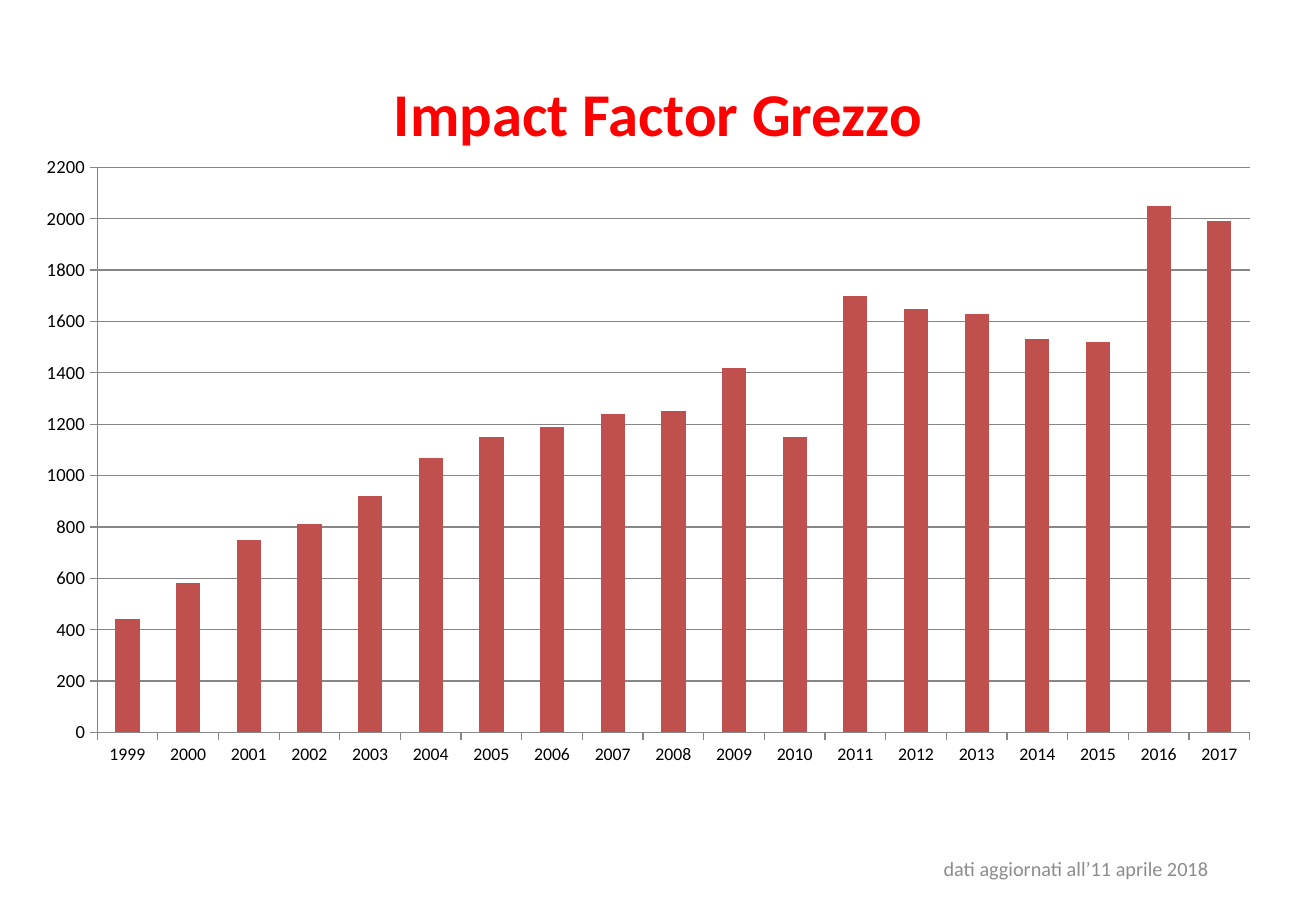
from dataclasses import dataclass

from lxml.etree import SubElement
from pptx import Presentation
from pptx.chart.data import CategoryChartData
from pptx.dml.color import RGBColor
from pptx.enum.chart import XL_CHART_TYPE, XL_TICK_MARK
from pptx.enum.text import MSO_ANCHOR, PP_ALIGN
from pptx.oxml import parse_xml
from pptx.oxml.ns import nsdecls, qn
from pptx.util import Cm, Pt

FONT = "Calibri"
COLORS = {"title": "FF0000", "note": "8C8C8C", "bar": "C0504D",
          "line": "868686", "text": "000000"}
START = 1999
VALUES = (440, 580, 750, 810, 920, 1070, 1150, 1190, 1240, 1250,
          1420, 1150, 1700, 1650, 1630, 1530, 1520, 2050, 1990)
PLOT = {"x": 0.06, "y": 0.04, "w": 0.92, "h": 0.89}


@dataclass
class Box:
    left: float
    top: float
    width: float
    height: float

    def frame(self) -> tuple:
        return Cm(self.left), Cm(self.top), Cm(self.width), Cm(self.height)


@dataclass
class Label:
    text: str
    size: float
    color: str
    bold: bool
    box: Box


TITLE = Label("Impact Factor Grezzo", 36, "title", True,
              Box(1.37, 0.76, 24.77, 3.18))
NOTE = Label("dati aggiornati all’11 aprile 2018", 12, "note", False,
             Box(18.14, 17.65, 8.71, 1.02))
CHART = Box(0.46, 2.97, 26.19, 13.28)


def tint(name: str) -> RGBColor:
    return RGBColor.from_string(COLORS[name])


def style(font, size: float, color: str, bold: bool = False) -> None:
    font.name = FONT
    font.size = Pt(size)
    font.bold = bold
    font.color.rgb = tint(color)


def write(shape, label: Label) -> None:
    shape.left, shape.top, shape.width, shape.height = label.box.frame()
    frame = shape.text_frame
    frame.word_wrap = True
    frame.vertical_anchor = MSO_ANCHOR.MIDDLE
    frame.text = label.text
    line = frame.paragraphs[0]
    line.alignment = PP_ALIGN.CENTER
    style(line.font, label.size, label.color, label.bold)


def place(chart) -> None:
    area = chart.plots[0]._element.getparent()
    for old in area.findall(qn("c:layout")):
        area.remove(old)
    layout = parse_xml(f"<c:layout {nsdecls('c')}/>")
    manual = SubElement(layout, qn("c:manualLayout"))
    SubElement(manual, qn("c:layoutTarget")).set("val", "inner")
    for key in "xy":
        SubElement(manual, qn(f"c:{key}Mode")).set("val", "edge")
    for key, value in PLOT.items():
        SubElement(manual, qn(f"c:{key}")).set("val", str(value))
    area.insert(0, layout)


def draw(slide) -> None:
    data = CategoryChartData()
    data.categories = [str(START + step) for step in range(len(VALUES))]
    data.add_series("Series 1", VALUES)
    chart = slide.shapes.add_chart(
        XL_CHART_TYPE.COLUMN_CLUSTERED, *CHART.frame(), data).chart
    chart.has_legend = False
    chart.has_title = False
    style(chart.font, 18, "text")
    place(chart)

    plot = chart.plots[0]
    plot.vary_by_categories = False
    plot.gap_width = 150
    fill = plot.series[0].format.fill
    fill.solid()
    fill.fore_color.rgb = tint("bar")

    for axis, size in ((chart.category_axis, 10.5), (chart.value_axis, 11)):
        style(axis.tick_labels.font, size, "text")
        axis.major_tick_mark = XL_TICK_MARK.OUTSIDE
        axis.minor_tick_mark = XL_TICK_MARK.NONE
        axis.format.line.color.rgb = tint("line")
        axis.format.line.width = Pt(0.75)

    scale = chart.value_axis
    scale.minimum_scale = 0
    scale.maximum_scale = 2200
    scale.major_unit = 200
    scale.has_major_gridlines = True
    grid = scale.major_gridlines.format.line
    grid.color.rgb = tint("line")
    grid.width = Pt(0.75)


def main() -> None:
    deck = Presentation()
    deck.slide_width = Cm(27.51)
    deck.slide_height = Cm(19.05)
    slide = deck.slides.add_slide(deck.slide_layouts[5])
    write(slide.shapes.title, TITLE)
    write(slide.shapes.add_textbox(*NOTE.box.frame()), NOTE)
    draw(slide)
    deck.save("out.pptx")


if __name__ == "__main__":
    main()
